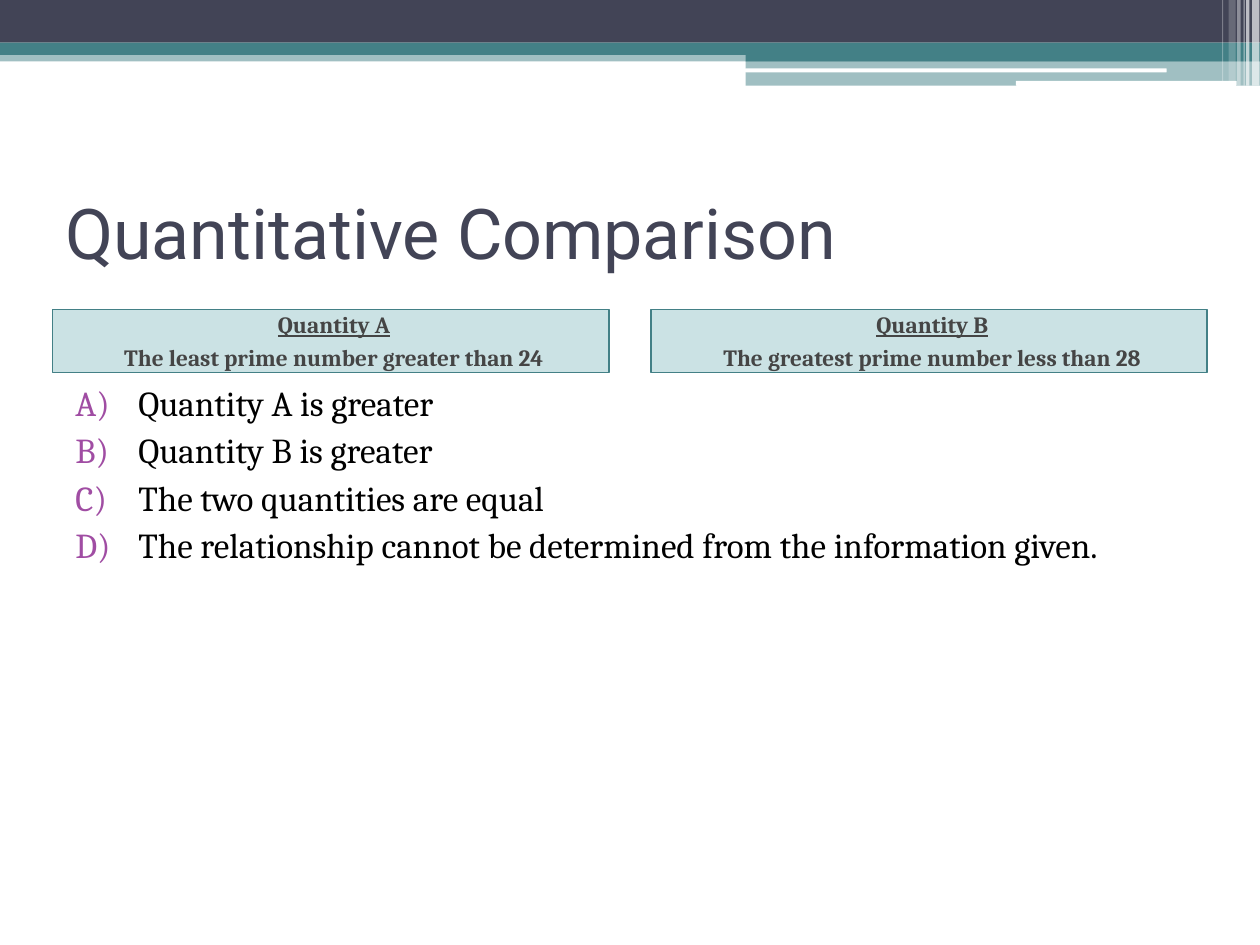
from lxml import etree
from pptx import Presentation
from pptx import util as u
from pptx.dml.color import RGBColor
from pptx.enum import shapes, text
from pptx.oxml.ns import qn

COLORS = {"navy": "424456", "teal": "438086", "panel": "328E97", "white": "FFFFFF",
          "gray": "454545", "black": "000000", "purple": "A04DA3"}
RECT = shapes.MSO_SHAPE.RECTANGLE
ROUND = shapes.MSO_SHAPE.ROUNDED_RECTANGLE


def add_run(p, content, font="Cambria", size=20, color="black", bold=False, underline=False):
    """Add a formatted run to a paragraph."""
    r = p.add_run()
    r.text = content
    f = r.font
    f.name, f.size, f.bold, f.underline = font, u.Pt(size), bold, underline
    f.color.rgb = RGBColor.from_string(COLORS[color])


class SlideBuilder:
    """Hold the style and the current slide."""

    def __init__(self, prs):
        self.s = prs.slides.add_slide(prs.slide_layouts[5])

    def rect(self, x, y, w, h, color, alpha=100, kind=RECT):
        """Add a filled shape without an outline."""
        sp = self.s.shapes.add_shape(kind, u.Cm(x), u.Cm(y), u.Cm(w), u.Cm(h))
        sp.shadow.inherit = False
        sp.fill.solid()
        sp.fill.fore_color.rgb = RGBColor.from_string(COLORS[color])
        if alpha < 100:
            clr = sp.fill._xPr.find(f".//{qn('a:srgbClr')}")
            etree.SubElement(clr, qn("a:alpha"), val=str(alpha * 1000))
        sp.line.fill.background()
        return sp

    def title(self, content, x, y, w, h):
        """Place and format the title."""
        sp = self.s.shapes.title
        sp.left, sp.top, sp.width, sp.height = u.Cm(x), u.Cm(y), u.Cm(w), u.Cm(h)
        tf = sp.text_frame
        tf.vertical_anchor = text.MSO_ANCHOR.MIDDLE
        p = tf.paragraphs[0]
        p.alignment = text.PP_ALIGN.LEFT
        add_run(p, content, font="Roboto", size=40, color="navy")

    def paragraphs(self, tf, lines, align, margin, indent=0):
        """Yield spaced and indented paragraphs with their lines."""
        for i, line in enumerate(lines):
            p = tf.add_paragraph() if i else tf.paragraphs[0]
            p.alignment, p.space_before = align, u.Pt(3)
            pPr = p._p.get_or_add_pPr()
            pPr.set("marL", str(u.Cm(margin)))
            pPr.set("indent", str(u.Cm(indent)))
            yield p, line

    def quantity(self, heading, content, x, y, w, h):
        """Add a quantity panel with an underlined heading."""
        sp = self.rect(x, y, w, h, "panel", 25)
        sp.line.color.rgb = RGBColor.from_string(COLORS["teal"])
        sp.line.width = u.Pt(1)
        tf = sp.text_frame
        tf.word_wrap = True
        tf.vertical_anchor = text.MSO_ANCHOR.MIDDLE
        for p, line in self.paragraphs(tf, (heading, content), text.PP_ALIGN.CENTER, 0.13):
            add_run(p, line, size=13.3, color="gray", bold=True, underline=line == heading)

    def choices(self, lines, x, y, w, h):
        """Add a lettered list of answers."""
        tf = self.s.shapes.add_textbox(u.Cm(x), u.Cm(y), u.Cm(w), u.Cm(h)).text_frame
        tf.word_wrap = True
        for p, line in self.paragraphs(tf, lines, text.PP_ALIGN.LEFT, 1.27, -1.27):
            pPr = p._p.get_or_add_pPr()
            clr = etree.SubElement(pPr, qn("a:buClr"))
            etree.SubElement(clr, qn("a:srgbClr"), val=COLORS["purple"])
            etree.SubElement(pPr, qn("a:buFont"), typeface="+mj-lt")
            etree.SubElement(pPr, qn("a:buAutoNum"), type="alphaUcParenR")
            add_run(p, line)


def main():
    """Build the quantitative comparison slide."""
    prs = Presentation()
    prs.slide_width, prs.slide_height = u.Cm(25.4), u.Cm(19.05)
    b = SlideBuilder(prs)

    for band in ((0, 1.01, 25.4, 0.23, "teal", 50), (0, 0, 25.4, 0.86, "navy"),
                 (0, 0.86, 25.4, 0.25, "teal"), (15.03, 0.99, 10.37, 0.25, "teal"),
                 (15.03, 1.23, 10.37, 0.5, "teal", 50),
                 (15.02, 1.38, 8.5, 0.08, "white", 100, ROUND),
                 (20.48, 1.63, 4.45, 0.1, "white", 100, ROUND)):
        b.rect(*band)
    for x, w, h, alpha in ((25.24, 0.15, 1.73, 65), (25.12, 0.07, 1.73, 65),
                           (25.07, 0.02, 1.73, 60), (24.94, 0.07, 1.73, 40),
                           (24.77, 0.14, 1.63, 20), (24.64, 0.02, 1.63, 30)):
        b.rect(x, 0, w, h, "white", alpha)

    b.title("Quantitative Comparison", 1.06, 3.18, 23.28, 2.96)
    b.quantity("Quantity A", "The least prime number greater than 24", 1.06, 6.24, 11.22, 1.27)
    b.quantity("Quantity B", "The greatest prime number less than 28", 13.12, 6.24, 11.22, 1.27)
    b.choices(("Quantity A is greater", "Quantity B is greater", "The two quantities are equal",
               "The relationship cannot be determined from the information given."),
              1.27, 7.57, 22.86, 9.45)
    prs.save("out.pptx")


if __name__ == "__main__":
    main()
